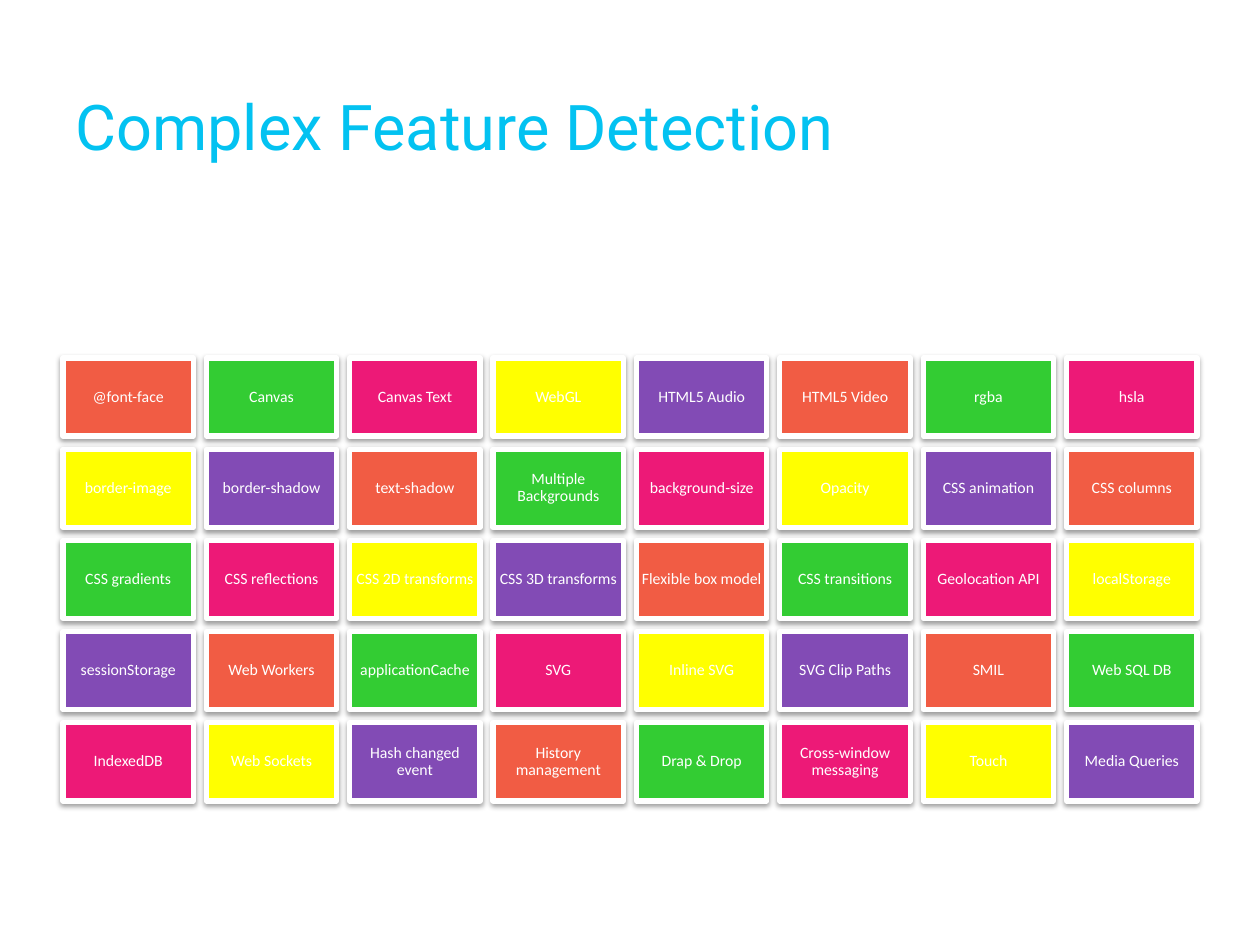
import dataclasses

import pptx
import pptx.dml.color
import pptx.enum.shapes
import pptx.enum.text
import pptx.oxml
import pptx.oxml.ns
import pptx.util

PX = 914400 / 126


@dataclasses.dataclass(frozen=True)
class Theme:
    heading: str = "03C2F1"
    light: str = "FFFFFF"
    shade: str = "000000"
    tiles: tuple = ("F15C44", "33CC33", "ED1977", "FFFF00", "824BB5")
    heading_font: str = "Roboto"
    tile_font: str = "Calibri"
    heading_size: int = 36
    tile_size: int = 9
    border: int = 3


THEME = Theme()
COLUMNS = 8
FEATURES = (
    "@font-face", "Canvas", "Canvas Text", "WebGL",
    "HTML5 Audio", "HTML5 Video", "rgba", "hsla",
    "border-image", "border-shadow", "text-shadow", "Multiple Backgrounds",
    "background-size", "Opacity", "CSS animation", "CSS columns",
    "CSS gradients", "CSS reflections", "CSS 2D transforms", "CSS 3D transforms",
    "Flexible box model", "CSS transitions", "Geolocation API", "localStorage",
    "sessionStorage", "Web Workers", "applicationCache", "SVG",
    "Inline SVG", "SVG Clip Paths", "SMIL", "Web SQL DB",
    "IndexedDB", "Web Sockets", "Hash changed event", "History management",
    "Drap & Drop", "Cross-window messaging", "Touch", "Media Queries",
)


def emu(*lengths):
    return [round(length * PX) for length in lengths]


def rgb(value):
    return pptx.dml.color.RGBColor.from_string(value)


def write(frame, text, font, size, color):
    frame.word_wrap = True
    frame.vertical_anchor = pptx.enum.text.MSO_ANCHOR.MIDDLE
    frame.text = text
    paragraph = frame.paragraphs[0]
    run = paragraph.runs[0]
    run.font.name = font
    run.font.size = pptx.util.Pt(size)
    run.font.color.rgb = rgb(color)
    return paragraph


def cast_shadow(tile):
    tile.shadow.inherit = False
    effects = tile._element.spPr.find(pptx.oxml.ns.qn("a:effectLst"))
    effects.append(pptx.oxml.parse_xml(
        f'<a:outerShdw {pptx.oxml.ns.nsdecls("a")} blurRad="{pptx.util.Pt(3.1)}" '
        f'dist="{pptx.util.Pt(1.6)}" dir="5400000" rotWithShape="0">'
        f'<a:srgbClr val="{THEME.shade}"><a:alpha val="38000"/></a:srgbClr>'
        '</a:outerShdw>'))


def add_heading(slide, left, top, width, height):
    heading = slide.shapes.add_textbox(*emu(left, top, width, height))
    write(heading.text_frame, "Complex Feature Detection",
          THEME.heading_font, THEME.heading_size, THEME.heading)


def add_tile(group, feature, color, left, top, width, height):
    tile = group.shapes.add_shape(
        pptx.enum.shapes.MSO_SHAPE.RECTANGLE, *emu(left, top, width, height))
    tile.fill.solid()
    tile.fill.fore_color.rgb = rgb(color)
    tile.line.color.rgb = rgb(THEME.light)
    tile.line.width = pptx.util.Pt(THEME.border)
    cast_shadow(tile)
    frame = tile.text_frame
    inset, = emu(5)
    frame.margin_left = frame.margin_right = inset
    frame.margin_top = frame.margin_bottom = inset
    label = write(frame, feature, THEME.tile_font, THEME.tile_size, THEME.light)
    label.alignment = pptx.enum.text.PP_ALIGN.CENTER
    label.line_spacing = 0.9
    label.space_after = pptx.util.Pt(3)


def add_feature_grid(slide, left, top, width, height):
    rows = len(FEATURES) // COLUMNS
    tile_width = width / (COLUMNS + 0.1 * (COLUMNS - 1))
    gap = 0.1 * tile_width
    tile_height = (height - gap * (rows - 1)) / rows
    group = slide.shapes.add_group_shape()
    for index, feature in enumerate(FEATURES):
        row, column = divmod(index, COLUMNS)
        add_tile(group, feature, THEME.tiles[index % len(THEME.tiles)],
                 left + column * (tile_width + gap),
                 top + row * (tile_height + gap),
                 tile_width, tile_height)


def main():
    deck = pptx.Presentation()
    deck.slide_width, deck.slide_height = emu(1260, 945)
    slide = deck.slides.add_slide(deck.slide_layouts[6])
    slide.background.fill.solid()
    slide.background.fill.fore_color.rgb = rgb(THEME.light)
    add_heading(slide, 63, 47, 1134, 157)
    add_feature_grid(slide, 63, 358, 1134, 443)
    deck.save("out.pptx")


if __name__ == "__main__":
    main()
